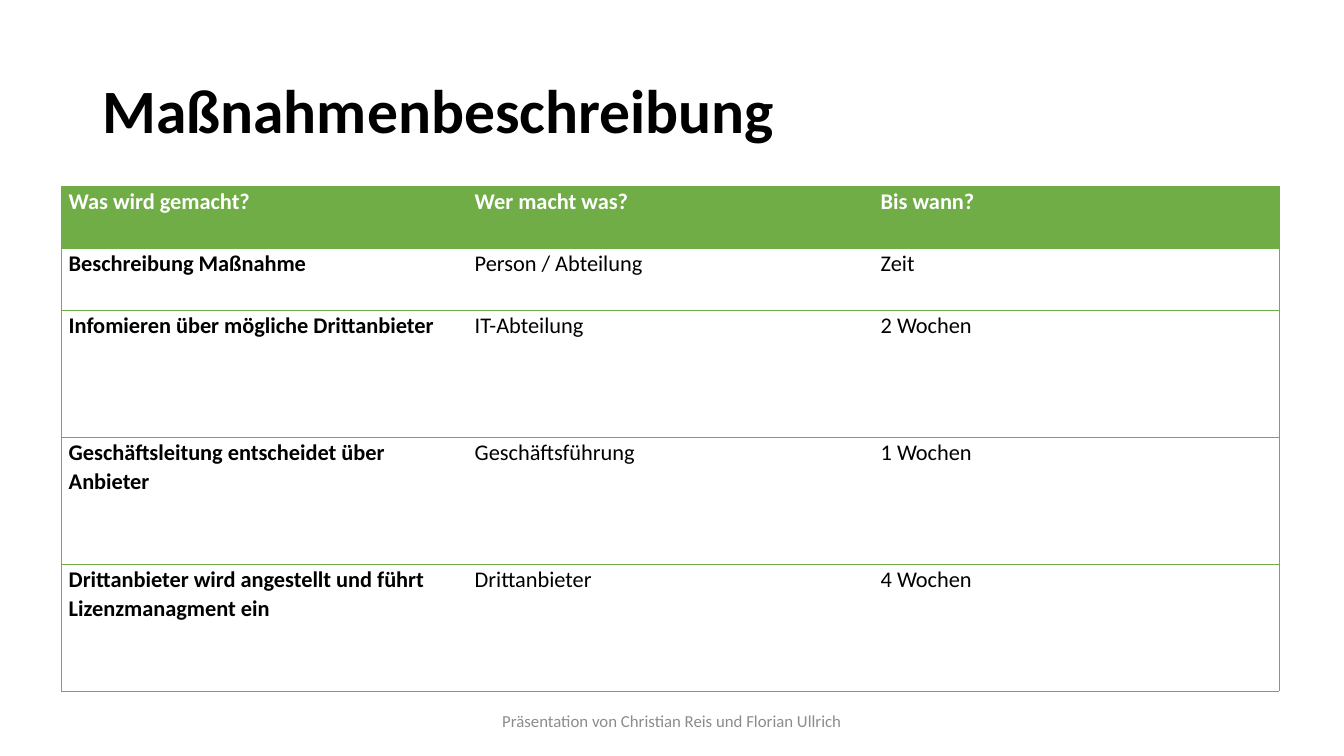
"""Build the slide with the table of planned measures."""
from lxml import etree
from pptx import Presentation
from pptx.dml.color import RGBColor
from pptx.enum import text
from pptx.oxml import ns
from pptx.util import Pt

TITLE = "Maßnahmenbeschreibung"
FOOTER = "Präsentation von Christian Reis und Florian Ullrich"
MEASURES = [
    ("Was wird gemacht?", "Wer macht was?", "Bis wann?"),
    ("Beschreibung Maßnahme", "Person / Abteilung", "Zeit"),
    ("Infomieren über mögliche Drittanbieter", "IT-Abteilung", "2 Wochen"),
    ("Geschäftsleitung entscheidet über Anbieter", "Geschäftsführung", "1 Wochen"),
    ("Drittanbieter wird angestellt und führt Lizenzmanagment ein",
     "Drittanbieter", "4 Wochen"),
]
ROW_HEIGHTS = [44.2, 44.2, 90.7, 90.7, 90.7]
COLUMN_WIDTH = 290
TABLE_LEFT, TABLE_TOP = 43.7, 133.2
CELL_MARGIN = 5.4
FONT = "Calibri"
GREEN = RGBColor(0x70, 0xAD, 0x47)
BLACK = RGBColor(0, 0, 0)
WHITE = RGBColor(255, 255, 255)
GRAY = RGBColor(0x8C, 0x8C, 0x8C)


def style(paragraph, size, color, bold=False):
    font = paragraph.font
    font.name, font.size, font.bold = FONT, Pt(size), bold
    font.color.rgb = color


def add_text(slide, wording, box, size, color, bold=False):
    frame = slide.shapes.add_textbox(*map(Pt, box)).text_frame
    frame.word_wrap = True
    frame.vertical_anchor = text.MSO_ANCHOR.MIDDLE
    paragraph = frame.paragraphs[0]
    paragraph.text = wording
    style(paragraph, size, color, bold)
    return paragraph


def set_borders(cell, visible):
    properties = cell._tc.get_or_add_tcPr()
    for position, side in enumerate("LRTB"):
        line = etree.Element(ns.qn(f"a:ln{side}"), w=str(Pt(0.5)))
        if side in visible:
            fill = etree.SubElement(line, ns.qn("a:solidFill"))
            etree.SubElement(fill, ns.qn("a:srgbClr"), val=str(GREEN))
        else:
            etree.SubElement(line, ns.qn("a:noFill"))
        properties.insert(position, line)


def add_measures(slide):
    columns = len(MEASURES[0])
    table = slide.shapes.add_table(
        len(MEASURES), columns, Pt(TABLE_LEFT), Pt(TABLE_TOP),
        Pt(columns * COLUMN_WIDTH), Pt(sum(ROW_HEIGHTS))).table
    for column in table.columns:
        column.width = Pt(COLUMN_WIDTH)
    for row_index, (wordings, height) in enumerate(zip(MEASURES, ROW_HEIGHTS)):
        table.rows[row_index].height = Pt(height)
        header = row_index == 0
        for column_index, wording in enumerate(wordings):
            cell = table.cell(row_index, column_index)
            cell.margin_left = cell.margin_right = Pt(CELL_MARGIN)
            cell.margin_top = cell.margin_bottom = 0
            cell.fill.solid()
            cell.fill.fore_color.rgb = GREEN if header else WHITE
            first, last = column_index == 0, column_index == columns - 1
            set_borders(cell, "TB" + "L" * first + "R" * last)
            paragraph = cell.text_frame.paragraphs[0]
            paragraph.text = wording
            paragraph.line_spacing = 1.07
            style(paragraph, 16, WHITE if header else BLACK, header or first)


def main():
    presentation = Presentation()
    presentation.slide_width, presentation.slide_height = Pt(960), Pt(540)
    slide = presentation.slides.add_slide(presentation.slide_layouts[6])
    title = add_text(slide, TITLE, (66, 28.75, 828, 104.4), 44, BLACK, True)
    title.line_spacing = 0.9
    add_measures(slide)
    footer = add_text(slide, FOOTER, (318, 500.5, 324, 28.75), 12, GRAY)
    footer.alignment = text.PP_ALIGN.CENTER
    presentation.save("out.pptx")


if __name__ == "__main__":
    main()
